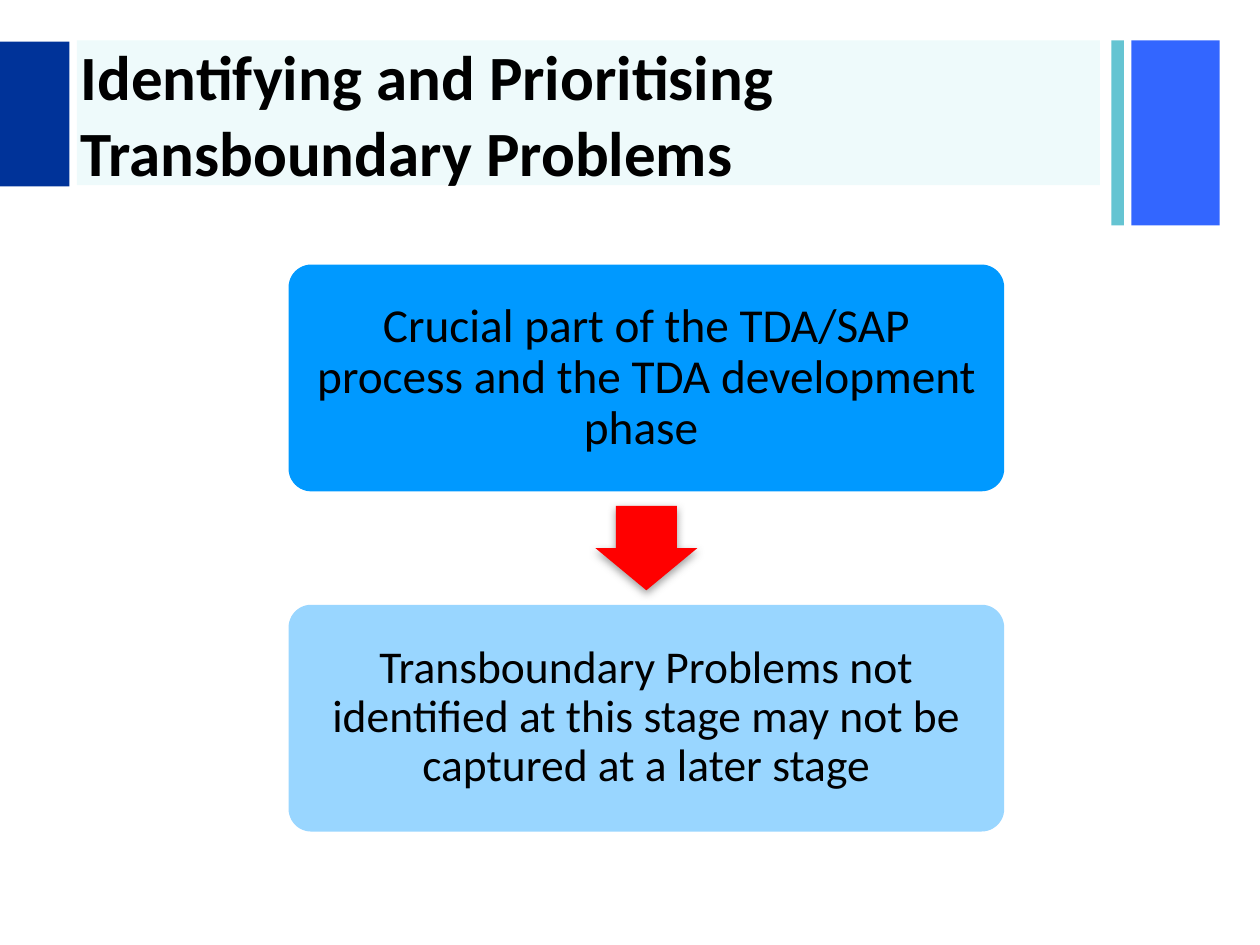
from lxml import etree
from pptx import Presentation
from pptx.dml.color import RGBColor
from pptx.enum.shapes import MSO_SHAPE
from pptx.enum.text import MSO_ANCHOR, MSO_AUTO_SIZE, PP_ALIGN
from pptx.oxml.ns import qn
from pptx.util import Inches, Pt

RECTANGLE, ROUNDED = MSO_SHAPE.RECTANGLE, MSO_SHAPE.ROUNDED_RECTANGLE
DOWN_ARROW = MSO_SHAPE.DOWN_ARROW
MIDDLE, NO_FIT = MSO_ANCHOR.MIDDLE, MSO_AUTO_SIZE.NONE
LEFT, CENTER = PP_ALIGN.LEFT, PP_ALIGN.CENTER

BLACK = RGBColor(0x00, 0x00, 0x00)
NAVY = RGBColor(0x00, 0x33, 0x99)
ROYAL = RGBColor(0x33, 0x66, 0xFF)
TEAL = RGBColor(0x65, 0xC4, 0xD2)
CYAN = RGBColor(0x14, 0xC5, 0xD0)
AZURE = RGBColor(0x00, 0x99, 0xFF)
PALE_BLUE = RGBColor(0x99, 0xD6, 0xFF)
RED = RGBColor(0xFF, 0x00, 0x00)
SHADOW_GREY = RGBColor(0x80, 0x80, 0x80)

presentation = Presentation()
presentation.slide_width, presentation.slide_height = Inches(10), Inches(7.5)
slide = presentation.slides.add_slide(presentation.slide_layouts[5])


def add_block(kind, left, top, width, height, color):
    shape = slide.shapes.add_shape(
        kind, Inches(left), Inches(top), Inches(width), Inches(height))
    shape.shadow.inherit = False
    shape.fill.solid()
    shape.fill.fore_color.rgb = color
    shape.line.fill.background()
    return shape


def write_text(shape, text, alignment, font_format):
    frame = shape.text_frame
    frame.word_wrap = True
    frame.auto_size = NO_FIT
    frame.vertical_anchor = MIDDLE
    frame.text = text
    paragraph = frame.paragraphs[0]
    paragraph.alignment = alignment
    font = paragraph.runs[0].font
    font.color.rgb = BLACK
    for name, value in {"name": "Calibri", **font_format}.items():
        setattr(font, name, value)


# Header band
BAND_TOP, BAND_HEIGHT, SIDE_HEIGHT = 0.32, 1.15, 1.47
add_block(RECTANGLE, 8.98, BAND_TOP, 0.7, SIDE_HEIGHT, ROYAL)
add_block(RECTANGLE, 8.82, BAND_TOP, 0.1, SIDE_HEIGHT, TEAL)
title_band = add_block(RECTANGLE, 0.61, BAND_TOP, 8.12, BAND_HEIGHT, CYAN)
add_block(RECTANGLE, 0, BAND_TOP + 0.01, 0.55, BAND_HEIGHT, NAVY)
band_color = title_band.fill._xPr.find(".//" + qn("a:srgbClr"))
etree.SubElement(band_color, qn("a:alpha"), val="7000")

# Title, in front of its band
title = slide.shapes.title
title.left, title.top = Inches(0.54), Inches(0.34)
title.width, title.height = Inches(8.27), Inches(1.12)
write_text(title, "Identifying and Prioritising Transboundary Problems",
           LEFT, {"size": Pt(36), "bold": True})
title.element.getparent().append(title.element)

# Two steps, one below the other
STEP_LEFT, STEP_TOP, STEP_WIDTH, STEP_HEIGHT, STEP_PITCH = 2.29, 2.1, 5.68, 1.8, 2.7
steps = [
    ("Crucial part of the TDA/SAP process and the TDA development phase ",
     AZURE, 27),
    ("Transboundary Problems not identified at this stage may not be "
     "captured at a later stage", PALE_BLUE, 26),
]
for row, (text, color, size) in enumerate(steps):
    step = add_block(ROUNDED, STEP_LEFT, STEP_TOP + row * STEP_PITCH,
                     STEP_WIDTH, STEP_HEIGHT, color)
    step.adjustments[0] = 0.1
    write_text(step, text, CENTER, {"size": Pt(size)})
    step.text_frame.paragraphs[0].line_spacing = 0.9
    for side in ("left", "top", "right", "bottom"):
        setattr(step.text_frame, f"margin_{side}", Inches(0.11))

# Arrow centred in the gap between the steps
ARROW_WIDTH, ARROW_HEIGHT = 0.81, 0.67
gap_middle = STEP_TOP + (STEP_HEIGHT + STEP_PITCH) / 2
arrow = add_block(DOWN_ARROW, STEP_LEFT + (STEP_WIDTH - ARROW_WIDTH) / 2,
                  gap_middle - ARROW_HEIGHT / 2, ARROW_WIDTH, ARROW_HEIGHT, RED)
arrow.adjustments[0], arrow.adjustments[1] = 0.6, 0.5
effects = arrow.element.spPr.find(qn("a:effectLst"))
shadow = etree.SubElement(effects, qn("a:outerShdw"), blurRad=str(Pt(5)),
                          dist=str(Pt(2)), dir="5400000", rotWithShape="0")
shadow_color = etree.SubElement(shadow, qn("a:srgbClr"), val=str(SHADOW_GREY))
etree.SubElement(shadow_color, qn("a:alpha"), val="75000")

presentation.save("out.pptx")
